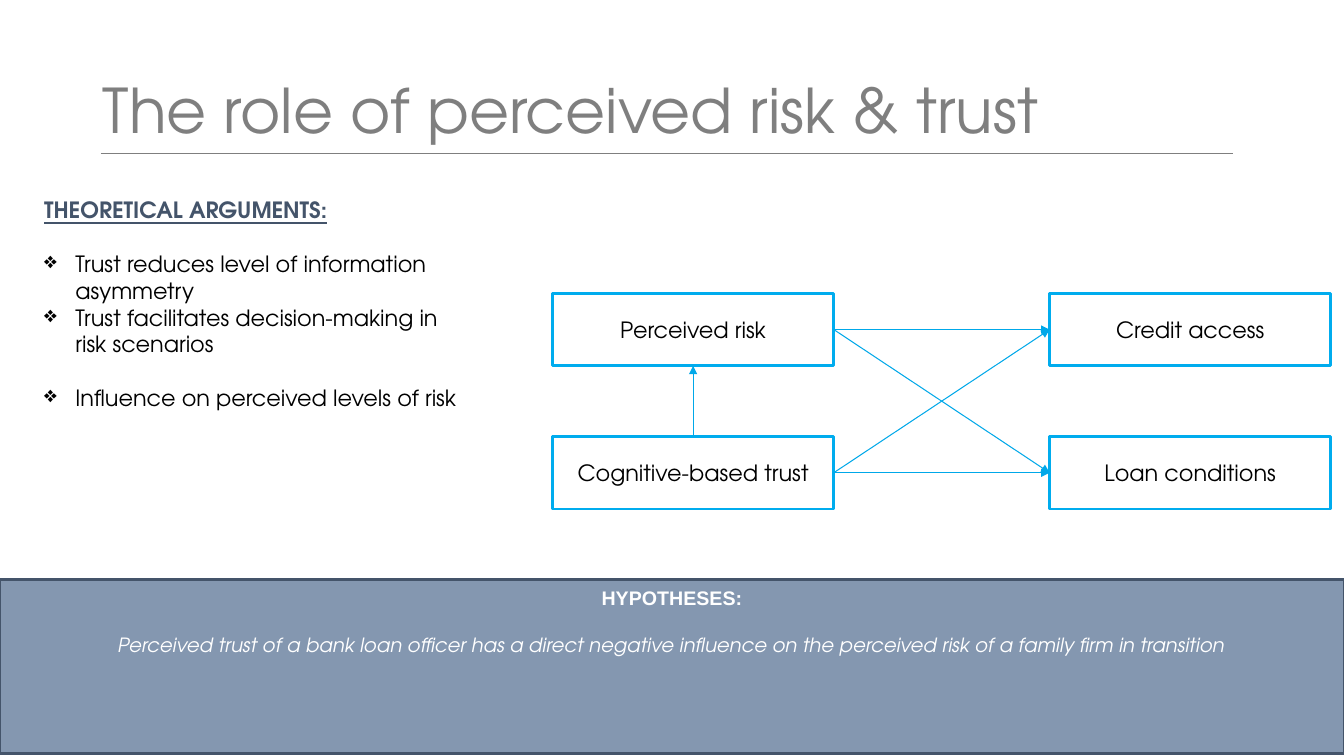
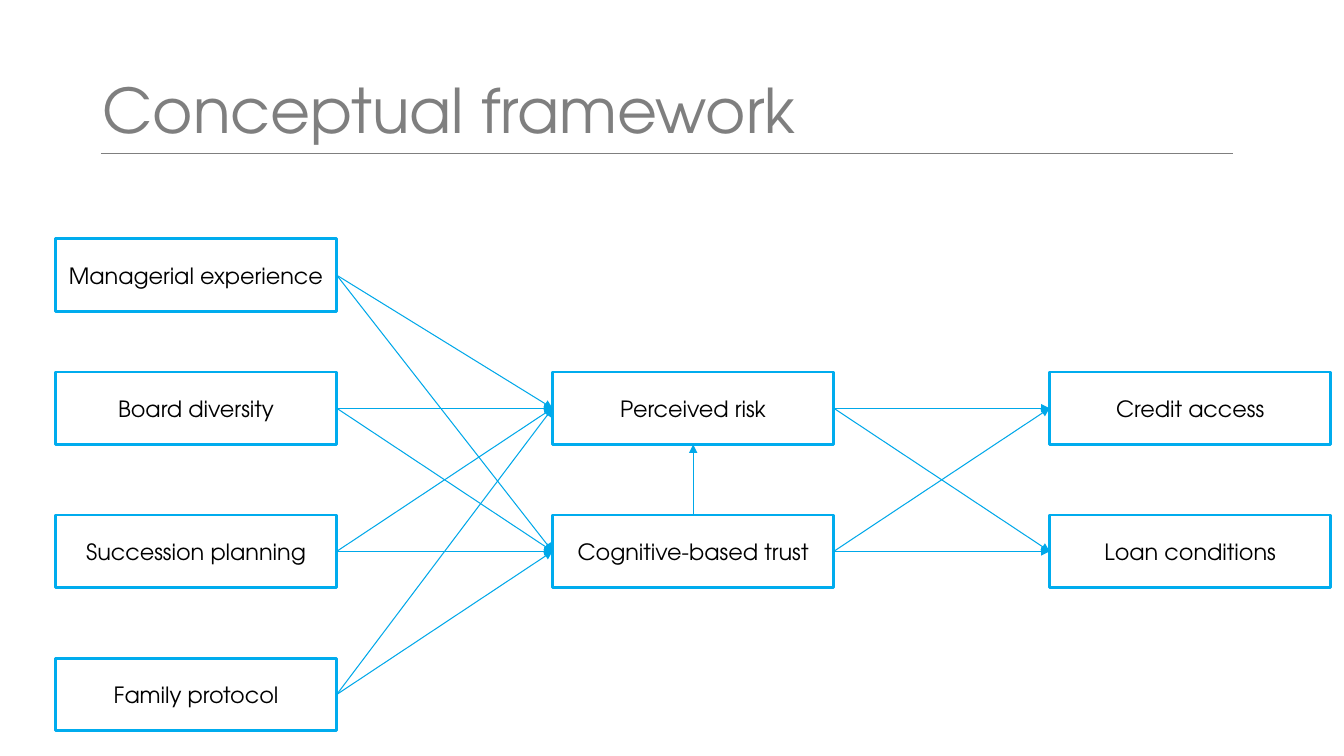
from lxml import etree
from pptx import Presentation
from pptx.dml.color import RGBColor
from pptx.enum.shapes import MSO_CONNECTOR, MSO_SHAPE
from pptx.enum.text import MSO_ANCHOR, MSO_AUTO_SIZE, PP_ALIGN
from pptx.oxml.ns import qn
from pptx.util import Inches, Pt

RECTANGLE = MSO_SHAPE.RECTANGLE
STRAIGHT = MSO_CONNECTOR.STRAIGHT
LEFT, CENTER = PP_ALIGN.LEFT, PP_ALIGN.CENTER
TOP, MIDDLE = MSO_ANCHOR.TOP, MSO_ANCHOR.MIDDLE
SITE_TOP, SITE_LEFT, SITE_BOTTOM, SITE_RIGHT = range(4)

COLORS = {
    "white": "FFFFFF",
    "black": "000000",
    "title": "7F7F7F",
    "box_line": "00ACEE",
    "arrow": "00A8E9",
    "slate": "44546A",
    "band": "8497B0",
}
FONT = "TeX Gyre Adventor"
HEADING_FONT = "Arial"

TITLES = ["The role of perceived risk & trust", "Conceptual framework"]
ARGUMENTS_HEADING = "THEORETICAL ARGUMENTS:"
# Each argument with the space before it, in points
ARGUMENTS = [
    ("Trust reduces level of information asymmetry", 19),
    ("Trust facilitates decision-making in risk scenarios", 0),
    ("Influence on perceived levels of risk", 19),
]
HYPOTHESES_HEADING = "HYPOTHESES:"
HYPOTHESIS = (
    "Perceived trust of a bank loan officer has a direct negative influence "
    "on the perceived risk of a family firm in transition"
)
MEDIATORS = ["Perceived risk", "Cognitive-based trust"]
OUTCOMES = ["Credit access", "Loan conditions"]
FIRST_FACTOR = "Managerial experience"
OTHER_FACTORS = ["Board diversity", "Succession planning", "Family protocol"]

SLIDE_WIDTH, SLIDE_HEIGHT = 13.33, 7.5
BOX_WIDTH, BOX_HEIGHT = 2.79, 0.72
FIRST_COLUMN, COLUMN_STEP, ROW_STEP = 0.55, 4.93, 1.42
ROLE_TOP, FRAMEWORK_TOP, FIRST_FACTOR_TOP = 2.91, 3.69, 2.37


def rgb(name):
    return RGBColor.from_string(COLORS[name])


def format_text(para, text, size, color, align=LEFT, font=FONT, bold=False, italic=False):
    para.text = text
    para.alignment = align
    para.font.name = font
    para.font.size = Pt(size)
    para.font.color.rgb = rgb(color)
    para.font.bold = bold
    para.font.italic = italic


def add_rectangle(page, left, top, width, height, fill, line=None, anchor=MIDDLE):
    box = page.shapes.add_shape(
        RECTANGLE, Inches(left), Inches(top), Inches(width), Inches(height))
    box.shadow.inherit = False
    box.fill.solid()
    box.fill.fore_color.rgb = rgb(fill)
    if line:
        box.line.color.rgb = rgb(line)
        box.line.width = Pt(2)
    else:
        box.line.fill.background()
    box.text_frame.word_wrap = True
    box.text_frame.vertical_anchor = anchor
    return box


def add_line(page, color, start=(0, 0), end=(0, 0)):
    points = [Inches(value) for value in (*start, *end)]
    line = page.shapes.add_connector(STRAIGHT, *points)
    line.line.color.rgb = rgb(color)
    line.line.width = Pt(0.75)
    etree.SubElement(line._element.spPr, qn("a:effectLst"))
    return line


def add_arrow(page, source, target, from_site=SITE_RIGHT, to_site=SITE_LEFT):
    arrow = add_line(page, "arrow")
    arrow.begin_connect(source, from_site)
    arrow.end_connect(target, to_site)
    outline = arrow.line._get_or_add_ln()
    etree.SubElement(outline, qn("a:tailEnd"), type="triangle")


def link_all(page, sources, targets):
    """Draw an arrow from every source to every target."""
    for source in sources:
        for target in targets:
            add_arrow(page, source, target)


def add_column(page, column, top, labels):
    boxes = []
    for row, label in enumerate(labels):
        box = add_rectangle(
            page, FIRST_COLUMN + column * COLUMN_STEP, top + row * ROW_STEP,
            BOX_WIDTH, BOX_HEIGHT, "white", "box_line")
        format_text(box.text_frame.paragraphs[0], label, 16, "black", CENTER)
        boxes.append(box)
    return boxes


def add_risk_model(page, top):
    """Draw mediators and outcomes with their arrows; return the mediators."""
    mediators = add_column(page, 1, top, MEDIATORS)
    outcomes = add_column(page, 2, top, OUTCOMES)
    link_all(page, mediators, outcomes)
    risk, trust = mediators
    add_arrow(page, trust, risk, SITE_TOP, SITE_BOTTOM)
    return mediators


def add_page(deck, text):
    page = deck.slides.add_slide(deck.slide_layouts[5])
    title = page.shapes.title
    title.left, title.top = Inches(0.92), Inches(0.4)
    title.width, title.height = Inches(11.5), Inches(1.45)
    title.text_frame.auto_size = MSO_AUTO_SIZE.NONE
    title.text_frame.vertical_anchor = MIDDLE
    para = title.text_frame.paragraphs[0]
    format_text(para, text, 44, "title")
    para.line_spacing = 0.9
    add_line(page, "title", (1, 1.52), (12.23, 1.52))
    return page


def add_bullet(para):
    properties = para._p.get_or_add_pPr()
    properties.set("marL", str(Inches(0.31)))
    properties.set("indent", str(Inches(-0.31)))
    color = etree.SubElement(properties, qn("a:buClr"))
    etree.SubElement(color, qn("a:srgbClr"), val=COLORS["black"])
    etree.SubElement(properties, qn("a:buChar"), char="❖")


def add_arguments(page):
    frame = add_rectangle(page, 0.34, 1.9, 4.44, 2.79, "white", anchor=TOP).text_frame
    heading = frame.paragraphs[0]
    format_text(heading, ARGUMENTS_HEADING, 16, "slate", bold=True)
    heading.font.underline = True
    for text, space in ARGUMENTS:
        para = frame.add_paragraph()
        format_text(para, text, 16, "black")
        para.space_before = Pt(space)
        add_bullet(para)


def add_hypotheses(page):
    frame = add_rectangle(
        page, 0, 5.75, SLIDE_WIDTH, 1.73, "band", "slate", TOP).text_frame
    frame.margin_top = Inches(0.06)
    format_text(frame.paragraphs[0], HYPOTHESES_HEADING, 14, "white", CENTER,
                HEADING_FONT, bold=True)
    para = frame.add_paragraph()
    format_text(para, HYPOTHESIS, 14, "white", CENTER, italic=True)
    para.space_before = Pt(17)


def main():
    deck = Presentation()
    deck.slide_width, deck.slide_height = Inches(SLIDE_WIDTH), Inches(SLIDE_HEIGHT)

    role, framework = [add_page(deck, title) for title in TITLES]
    add_risk_model(role, ROLE_TOP)
    add_arguments(role)
    add_hypotheses(role)

    factors = add_column(framework, 0, FIRST_FACTOR_TOP, [FIRST_FACTOR])
    factors += add_column(framework, 0, FRAMEWORK_TOP, OTHER_FACTORS)
    mediators = add_risk_model(framework, FRAMEWORK_TOP)
    link_all(framework, factors, mediators)

    deck.save("out.pptx")


if __name__ == "__main__":
    main()
